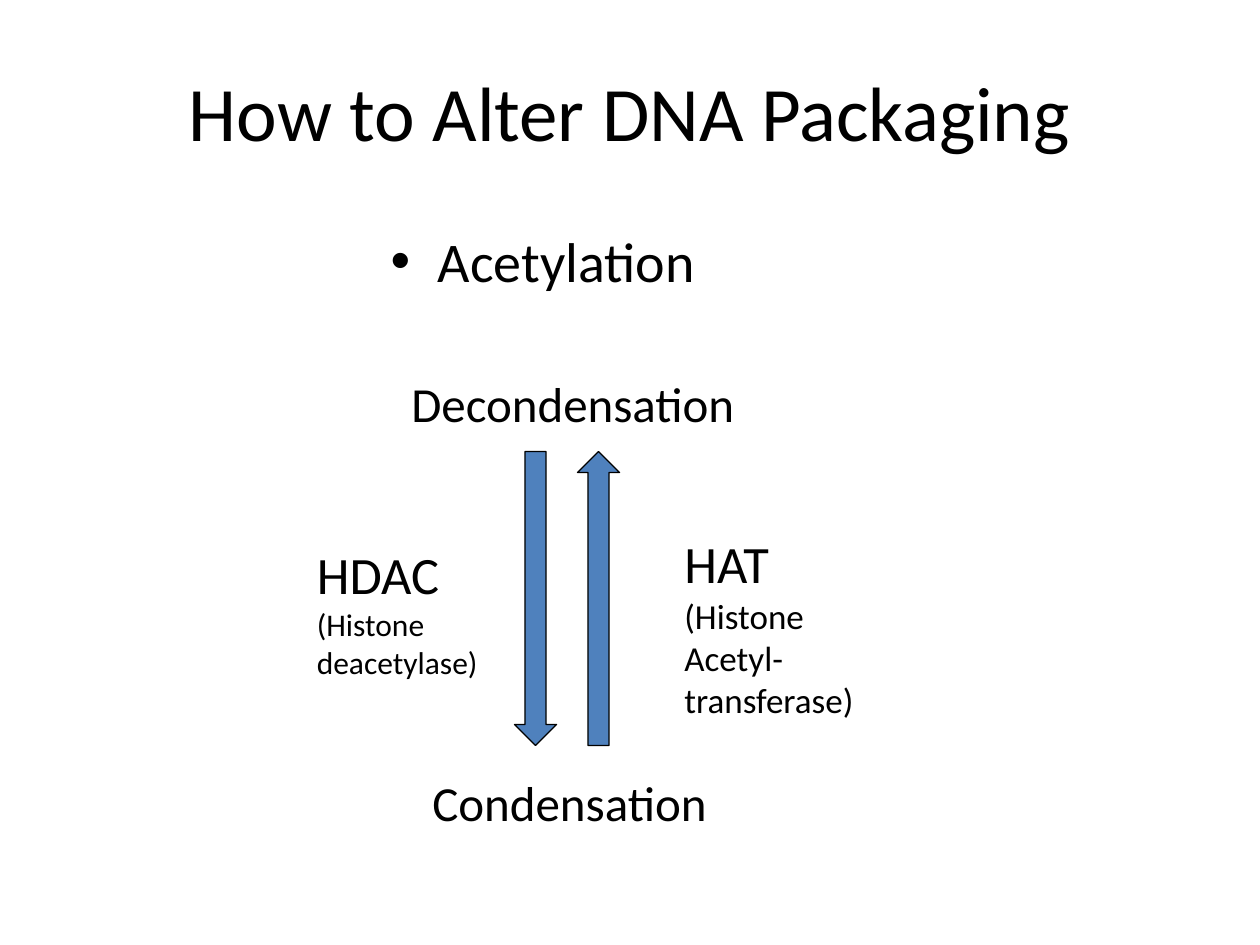
"""Build a slide on how histone acetylation alters DNA packaging."""
from dataclasses import dataclass

from pptx import Presentation
from pptx.dml.color import RGBColor
from pptx.enum.shapes import MSO_SHAPE
from pptx.enum.text import MSO_ANCHOR, PP_ALIGN
from pptx.util import Pt

DOWN, UP = MSO_SHAPE.DOWN_ARROW, MSO_SHAPE.UP_ARROW
LEFT, CENTER = PP_ALIGN.LEFT, PP_ALIGN.CENTER
TOP, MIDDLE = MSO_ANCHOR.TOP, MSO_ANCHOR.MIDDLE


@dataclass(frozen=True)
class Theme:
    font: str = "Calibri"
    ink: RGBColor = RGBColor(0x00, 0x00, 0x00)
    arrow: RGBColor = RGBColor(0x4F, 0x81, 0xBD)
    title: int = 44
    bullet: int = 32
    enzyme: int = 30
    state: int = 28
    hat_name: int = 20
    hdac_name: int = 18


theme = Theme()


def write(sp, *lines, align=LEFT, anchor=TOP):
    tf = sp.text_frame
    tf.word_wrap = True
    tf.vertical_anchor = anchor
    for i, (text, size) in enumerate(lines):
        p = tf.add_paragraph() if i else tf.paragraphs[0]
        p.alignment = align
        r = p.add_run()
        r.text = text
        r.font.name = theme.font
        r.font.size = Pt(size)
        r.font.color.rgb = theme.ink


def place(sp, left, top, width, height):
    sp.left, sp.top, sp.width, sp.height = Pt(left), Pt(top), Pt(width), Pt(height)


prs = Presentation()
prs.slide_width, prs.slide_height = Pt(720), Pt(540)
slide = prs.slides.add_slide(prs.slide_layouts[1])
title, body = slide.placeholders

place(title, 54, 18, 612, 90)
write(title, ("How to Alter DNA Packaging", theme.title), align=CENTER, anchor=MIDDLE)

place(body, 216, 126, 240, 66)
write(body, ("Acetylation", theme.bullet))

for shape_type, left in ((DOWN, 294), (UP, 330)):
    sp = slide.shapes.add_shape(shape_type, Pt(left), Pt(258), Pt(24), Pt(168))
    sp.shadow.inherit = False
    sp.fill.solid()
    sp.fill.fore_color.rgb = theme.arrow
    sp.line.color.rgb = theme.ink
    sp.line.width = Pt(0.75)

labels = (
    ((384, 300, 152.5, 116.5), (("HAT", theme.enzyme), ("(Histone", theme.hat_name),
                                ("Acetyl-transferase)", theme.hat_name))),
    ((174, 306, 114, 87), (("HDAC", theme.enzyme),
                           ("(Histone deacetylase)", theme.hdac_name))),
    ((240, 438, 174, 41), (("Condensation", theme.state),)),
    ((228, 210, 204, 41), (("Decondensation", theme.state),)),
)
for box, lines in labels:
    sp = slide.shapes.add_textbox(*map(Pt, box))
    write(sp, *lines)

prs.save("out.pptx")
